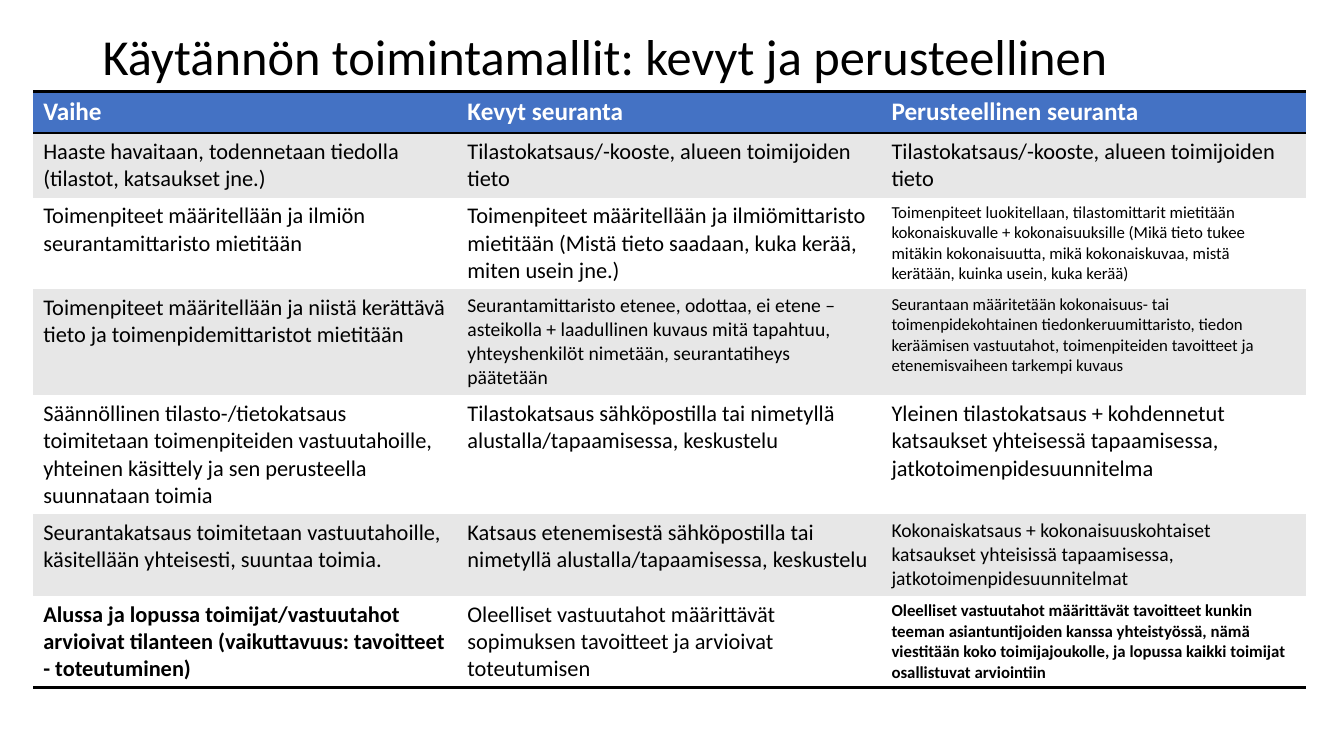
from dataclasses import dataclass

from pptx import Presentation
from pptx.dml.color import RGBColor
from pptx.enum.text import MSO_ANCHOR as Anchor
from pptx.oxml import parse_xml
from pptx.oxml.ns import nsdecls, qn
from pptx.util import Inches, Pt


@dataclass(frozen=True)
class Theme:
    font: str = "Calibri"
    ink: str = "000000"
    paper: str = "FFFFFF"
    header: str = "4472C4"
    band: str = "E7E7E7"
    title: int = 36
    heading: int = 18
    body: int = 16
    small: int = 14
    tiny: int = 12
    rule: int = 2


THEME = Theme()
PLAIN_TABLE = "{2D5ABB26-0587-4C30-8999-92F81FD0307C}"
HEADINGS = ["Vaihe", "Kevyt seuranta", "Perusteellinen seuranta"]
STATISTICS = "Tilastokatsaus/-kooste, alueen toimijoiden tieto"
PHASES = [
    ["Haaste havaitaan, todennetaan tiedolla (tilastot, katsaukset jne.)", STATISTICS, STATISTICS],
    [
        "Toimenpiteet määritellään ja ilmiön seurantamittaristo mietitään",
        "Toimenpiteet määritellään ja ilmiömittaristo mietitään (Mistä tieto saadaan, kuka kerää, "
        "miten usein jne.)",
        "Toimenpiteet luokitellaan, tilastomittarit mietitään kokonaiskuvalle + kokonaisuuksille "
        "(Mikä tieto tukee mitäkin kokonaisuutta, mikä kokonaiskuvaa, mistä kerätään, "
        "kuinka usein, kuka kerää)",
    ],
    [
        "Toimenpiteet määritellään ja niistä kerättävä tieto ja toimenpidemittaristot mietitään",
        "Seurantamittaristo etenee, odottaa, ei etene –asteikolla + laadullinen kuvaus mitä "
        "tapahtuu, yhteyshenkilöt nimetään, seurantatiheys päätetään",
        "Seurantaan määritetään kokonaisuus- tai toimenpidekohtainen tiedonkeruumittaristo, "
        "tiedon keräämisen vastuutahot, toimenpiteiden tavoitteet ja etenemisvaiheen "
        "tarkempi kuvaus",
    ],
    [
        "Säännöllinen tilasto-/tietokatsaus toimitetaan toimenpiteiden vastuutahoille, yhteinen "
        "käsittely ja sen perusteella suunnataan toimia",
        "Tilastokatsaus sähköpostilla tai nimetyllä alustalla/tapaamisessa, keskustelu",
        "Yleinen tilastokatsaus + kohdennetut katsaukset yhteisessä tapaamisessa, "
        "jatkotoimenpidesuunnitelma",
    ],
    [
        "Seurantakatsaus toimitetaan vastuutahoille, käsitellään yhteisesti, suuntaa toimia.",
        "Katsaus etenemisestä sähköpostilla tai nimetyllä alustalla/tapaamisessa, keskustelu",
        "Kokonaiskatsaus + kokonaisuuskohtaiset katsaukset yhteisissä tapaamisessa, "
        "jatkotoimenpidesuunnitelmat",
    ],
    [
        "Alussa ja lopussa toimijat/vastuutahot arvioivat tilanteen (vaikuttavuus: tavoitteet "
        "- toteutuminen)",
        "Oleelliset vastuutahot määrittävät sopimuksen tavoitteet ja arvioivat toteutumisen",
        "Oleelliset vastuutahot määrittävät tavoitteet kunkin teeman asiantuntijoiden kanssa "
        "yhteistyössä, nämä viestitään koko toimijajoukolle, ja lopussa kaikki toimijat "
        "osallistuvat arviointiin",
    ],
]
ROW_HEIGHTS = [0.41, 0.64, 0.91, 1.05, 1.18, 0.81, 0.91]
SIZES = {
    (2, 2): THEME.tiny,
    (3, 1): THEME.small,
    (3, 2): THEME.tiny,
    (5, 2): THEME.small,
    (6, 2): THEME.tiny,
}
BOLD_CELLS = {(6, 0), (6, 2)}


def write(frame, text, *, size, color=THEME.ink, bold=False, spacing=None):
    para = frame.paragraphs[0]
    para.line_spacing = spacing
    span = para.add_run()
    span.text = text
    span.font.name = THEME.font
    span.font.size = Pt(size)
    span.font.bold = bold
    span.font.color.rgb = RGBColor.from_string(color)


def rule_cell(cell, edges):
    properties = cell._tc.get_or_add_tcPr()
    for position, edge in enumerate(edges):
        properties.insert(position, parse_xml(
            f'<a:{edge} {nsdecls("a")} w="{Pt(THEME.rule)}"><a:solidFill>'
            f'<a:srgbClr val="{THEME.ink}"/></a:solidFill></a:{edge}>'
        ))


def add_title(page, box, text):
    title = page.shapes.add_textbox(*map(Inches, box))
    title.text_frame.word_wrap = True
    title.text_frame.vertical_anchor = Anchor.MIDDLE
    write(title.text_frame, text, size=THEME.title, spacing=0.9)


def add_phase_table(page, box):
    rows = [HEADINGS, *PHASES]
    frame = page.shapes.add_table(len(rows), len(HEADINGS), *map(Inches, box))
    table = frame.table
    table.horz_banding = False
    next(frame.element.iter(qn("a:tableStyleId"))).text = PLAIN_TABLE
    for column in table.columns:
        column.width = Inches(box[2] / len(HEADINGS))
    for row_index, texts in enumerate(rows):
        table.rows[row_index].height = Inches(ROW_HEIGHTS[row_index])
        is_header = row_index == 0
        fill = THEME.header if is_header else THEME.band if row_index % 2 else THEME.paper
        for column_index, text in enumerate(texts):
            place = row_index, column_index
            cell = table.cell(*place)
            cell.fill.solid()
            cell.fill.fore_color.rgb = RGBColor.from_string(fill)
            write(
                cell.text_frame,
                text,
                size=THEME.heading if is_header else SIZES.get(place, THEME.body),
                color=THEME.paper if is_header else THEME.ink,
                bold=is_header or place in BOLD_CELLS,
            )
            if is_header:
                rule_cell(cell, ["lnT", "lnB"])
            elif row_index == len(rows) - 1:
                rule_cell(cell, ["lnB"])


def main():
    deck = Presentation()
    deck.slide_width, deck.slide_height = Inches(13.33), Inches(7.5)
    page = deck.slides.add_slide(deck.slide_layouts[6])
    add_title(page, (0.92, 0.18, 11.5, 0.82), "Käytännön toimintamallit: kevyt ja perusteellinen")
    add_phase_table(page, (0.33, 0.91, 12.62, sum(ROW_HEIGHTS)))
    deck.save("out.pptx")


if __name__ == "__main__":
    main()
